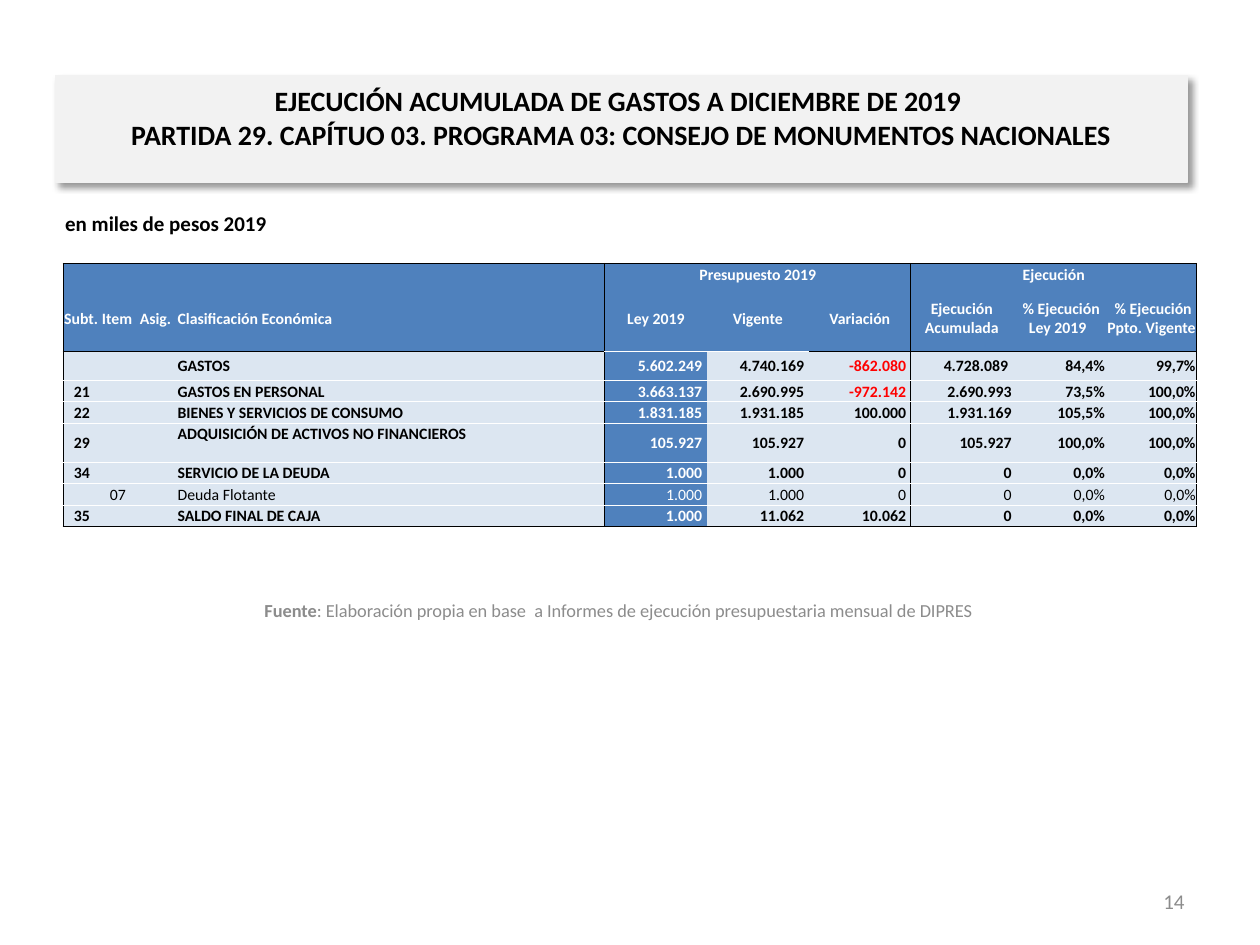
from lxml.etree import SubElement
from pptx import Presentation
from pptx.dml.color import RGBColor
from pptx.enum.text import MSO_ANCHOR as Anchor, MSO_AUTO_SIZE as AutoSize, PP_ALIGN as Align
from pptx.oxml.ns import qn
from pptx.util import Pt

BLACK, WHITE, RED, GREY = "000000", "FFFFFF", "FF0000", "8C8C8C"
BLUE, PALE, PANEL = "4F81BD", "DCE6F1", "F2F2F2"

# Table content
GROUPS = {4: "Presupuesto 2019", 7: "Ejecución"}
HEADINGS = ["Subt.", "Item", "Asig.", "Clasificación Económica", "Ley 2019", "Vigente",
            "Variación", "Ejecución Acumulada", " % Ejecución Ley 2019 ",
            " % Ejecución Ppto. Vigente "]
SPENDING = [
    ["", "", "", "GASTOS", "5.602.249 ", "4.740.169 ", "-862.080 ", "4.728.089 ", "84,4%", "99,7%"],
    ["21", "", "", "GASTOS EN PERSONAL", "3.663.137 ", "2.690.995 ", "-972.142 ", "2.690.993",
     "73,5%", "100,0%"],
    ["22", "", "", "BIENES Y SERVICIOS DE CONSUMO", "1.831.185 ", "1.931.185 ", "100.000 ",
     "1.931.169", "105,5%", "100,0%"],
    ["29", "", "", "ADQUISICIÓN DE ACTIVOS NO FINANCIEROS", "105.927 ", "105.927 ", "0 ",
     "105.927", "100,0%", "100,0%"],
    ["34", "", "", "SERVICIO DE LA DEUDA", "1.000 ", "1.000 ", "0 ", "0", "0,0%", "0,0%"],
    ["", "07 ", "", "Deuda Flotante", "1.000 ", "1.000 ", "0 ", "0", "0,0%", "0,0%"],
    ["35", "", "", "SALDO FINAL DE CAJA", "1.000 ", "11.062 ", "10.062 ", "0", "0,0%", "0,0%"],
]
COLUMN_WIDTHS = [21.6] * 3 + [244.8] + [58.3] * 4 + [53.3, 51.8]
ROW_HEIGHTS = [12.3, 38, 16.6, 12.3, 12.3, 22.3, 12.3, 12.3, 12.3]
HEADER_ROWS = 2
GROUP_EDGES = {0, 4, 7, 10}
NAME, LAW = 3, 4  # columns of the classification and of the budget law


def color(hex_string):
    return RGBColor.from_string(hex_string)


class BudgetSlide:
    font = "Calibri"

    def __init__(self, slide):
        self.slide = slide

    def run(self, paragraph, text, size, fill, bold=False):
        font_run = paragraph.add_run()
        font_run.text = text
        font = font_run.font
        font.name, font.size, font.bold = self.font, Pt(size), bold
        font.color.rgb = color(fill)

    def title(self, box, lines):
        heading = self.slide.shapes.title
        heading.left, heading.top, heading.width, heading.height = map(Pt, box)
        heading.fill.solid()
        heading.fill.fore_color.rgb = color(PANEL)
        heading.line.color.rgb = color(PANEL)
        heading.line.width = Pt(0.75)
        self.soft_shadow(heading)
        frame = heading.text_frame
        frame.auto_size = AutoSize.NONE
        frame.vertical_anchor = Anchor.TOP
        frame.margin_top = Pt(4.8)
        paragraph = frame.paragraphs[0]
        paragraph.alignment = Align.CENTER
        for index, line in enumerate(lines):
            if index:
                paragraph.add_line_break()
            self.run(paragraph, line, 16, BLACK, True)

    def soft_shadow(self, shape):
        effects = SubElement(shape._element.spPr, qn("a:effectLst"))
        shadow = SubElement(effects, qn("a:outerShdw"), blurRad=str(Pt(4)), dist=str(Pt(3)),
                            dir=str(45 * 60000), algn="tl", rotWithShape="0")
        shade = SubElement(shadow, qn("a:srgbClr"), val=BLACK)
        SubElement(shade, qn("a:alpha"), val="40000")

    def text(self, box, runs, size, fill, align=Align.LEFT, anchor=Anchor.TOP):
        frame = self.slide.shapes.add_textbox(*map(Pt, box)).text_frame
        frame.word_wrap = True
        frame.vertical_anchor = anchor
        paragraph = frame.paragraphs[0]
        paragraph.alignment = align
        for words, bold in runs:
            self.run(paragraph, words, size, fill, bold)

    def border(self, cell, side, fill):
        edge = SubElement(cell._tc.get_or_add_tcPr(), qn(f"a:ln{side}"), w=str(Pt(0.5)))
        if fill:
            SubElement(SubElement(edge, qn("a:solidFill")), qn("a:srgbClr"), val=fill)
        else:
            SubElement(edge, qn("a:noFill"))

    def cell(self, cell, words, fill, ink, bold, align, anchor, borders):
        cell.margin_left = cell.margin_right = cell.margin_top = Pt(0.7)
        cell.margin_bottom = 0
        cell.vertical_anchor = anchor
        for side, edge in borders.items():
            self.border(cell, side, edge)
        cell.fill.solid()
        cell.fill.fore_color.rgb = color(fill)
        paragraph = cell.text_frame.paragraphs[0]
        paragraph.alignment = align
        if words:
            self.run(paragraph, words, 9, ink, bold)
        else:
            paragraph._p.get_or_add_endParaRPr().set("sz", "900")

    def table(self, left, top):
        rows = [[GROUPS.get(c, "") for c in range(len(HEADINGS))], HEADINGS, *SPENDING]
        last = len(rows)
        grid = self.slide.shapes.add_table(
            last, len(HEADINGS), Pt(left), Pt(top),
            Pt(sum(COLUMN_WIDTHS)), Pt(sum(ROW_HEIGHTS))).table
        grid.first_row = grid.horz_banding = False
        for column, width in zip(grid.columns, COLUMN_WIDTHS):
            column.width = Pt(width)
        for row, height in zip(grid.rows, ROW_HEIGHTS):
            row.height = Pt(height)
        for start in GROUPS:
            grid.cell(0, start).merge(grid.cell(0, start + 2))

        def row_edge(r, c):
            if r in (0, last):
                return BLACK
            if r < HEADER_ROWS:
                return None
            return BLACK if r == HEADER_ROWS and c not in (LAW, LAW + 1) else WHITE

        def column_edge(c):
            return BLACK if c in GROUP_EDGES else None

        for r, row in enumerate(rows):
            header = r < HEADER_ROWS
            for c, words in enumerate(row):
                span = 3 if r == 0 and c in GROUPS else 1
                borders = {"L": column_edge(c), "R": column_edge(c + span),
                           "T": row_edge(r, c), "B": row_edge(r + 1, c)}
                filled = header or c == LAW
                ink = WHITE if filled else RED if words.startswith("-") else BLACK
                if header:
                    align = Align.CENTER if c > NAME else Align.LEFT
                else:
                    align = (Align.RIGHT if c > NAME else
                             Align.JUSTIFY if c == NAME else Align.CENTER)
                # The tall row keeps its name at the top
                tall = row[0] == "29" and c == NAME
                anchor = Anchor.BOTTOM if r == 0 else Anchor.TOP if tall else Anchor.MIDDLE
                self.cell(grid.cell(r, c), words, BLUE if filled else PALE, ink,
                          not row[1].startswith("07"), align, anchor, borders)


def main():
    deck = Presentation()
    deck.slide_width, deck.slide_height = Pt(720), Pt(540)
    page = BudgetSlide(deck.slides.add_slide(deck.slide_layouts[5]))

    # Heading and unit
    page.title((31.7, 43.2, 646.6, 61.2),
               ["EJECUCIÓN ACUMULADA DE GASTOS A DICIEMBRE DE 2019 ",
                "PARTIDA 29. CAPÍTUO 03. PROGRAMA 03: CONSEJO DE MONUMENTOS NACIONALES"])
    page.text((30.2, 116.6, 648, 36), [("en miles de pesos 2019", True)], 12, BLACK)

    # Budget table
    page.table(36, 150.5)

    # Source and page number
    page.text((31.7, 337, 643.7, 23.8),
              [("Fuente", True),
               (": Elaboración propia en base  a Informes de ejecución presupuestaria "
                "mensual de DIPRES", False)],
              10.5, GREY, Align.CENTER, Anchor.MIDDLE)
    page.text((516.2, 500.4, 167.8, 28.8), [("14", False)], 12, GREY, Align.RIGHT, Anchor.MIDDLE)

    deck.save("out.pptx")


if __name__ == "__main__":
    main()
